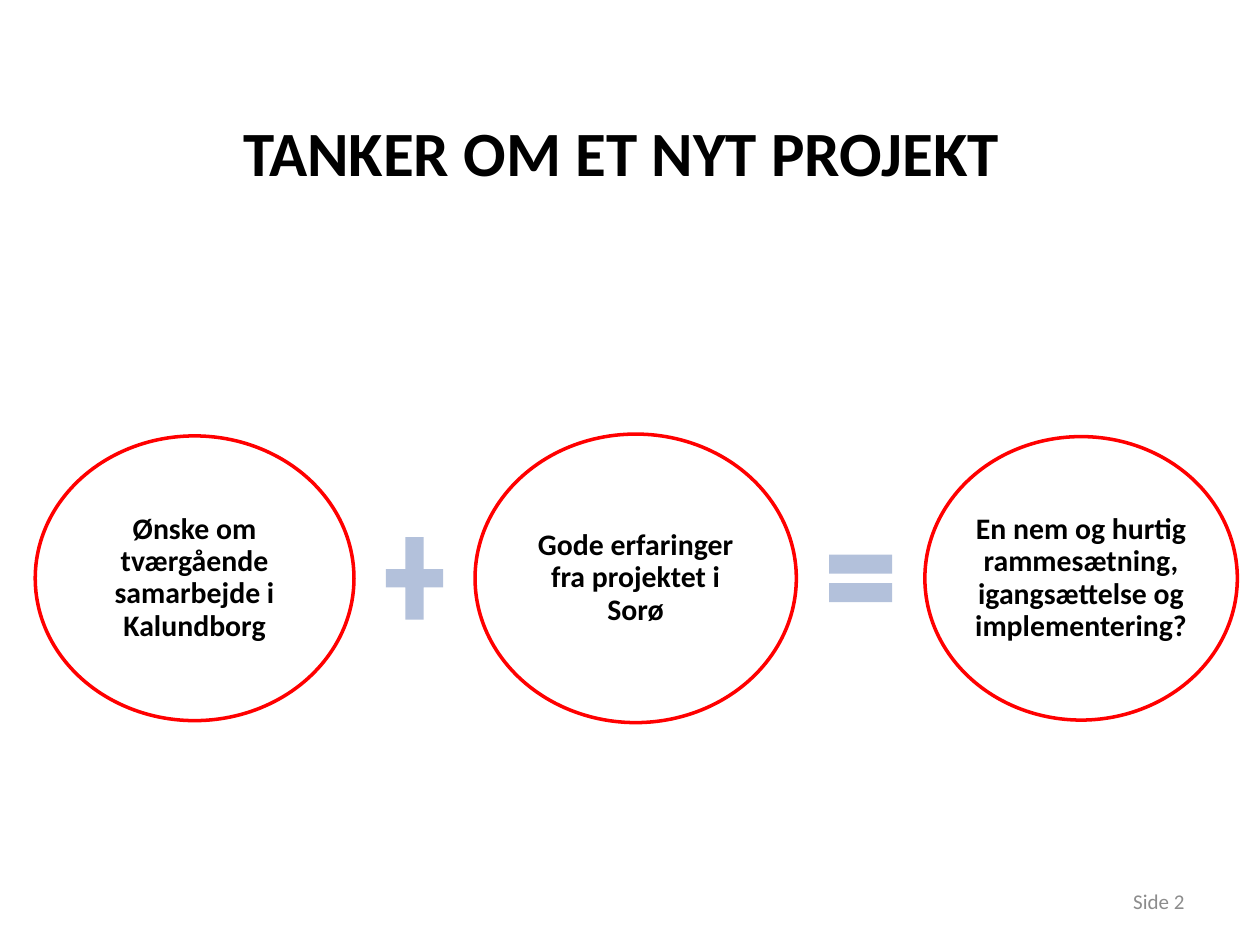
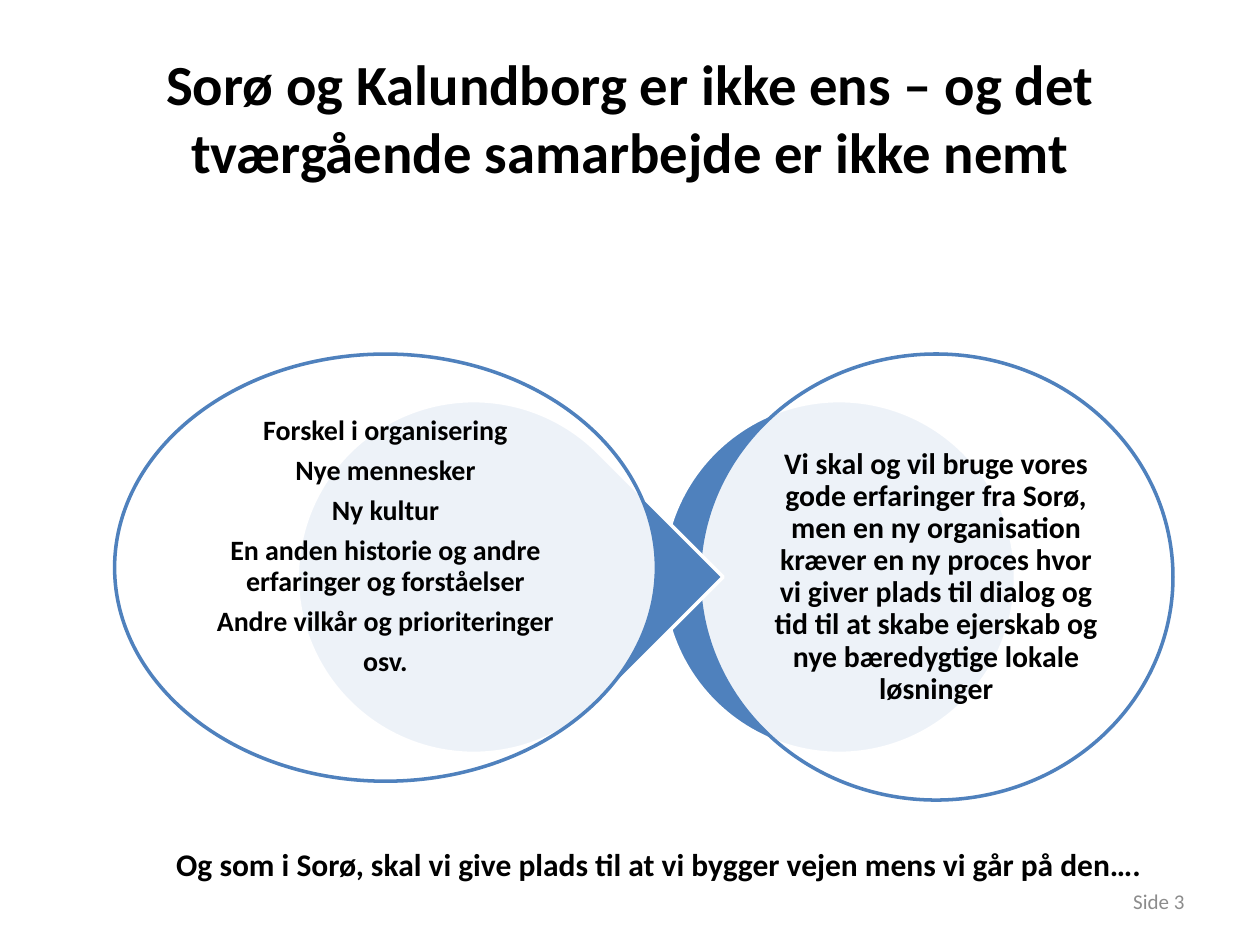
from lxml import etree
from pptx import Presentation
from pptx.dml.color import RGBColor
from pptx.enum.shapes import MSO_SHAPE
from pptx.enum.text import MSO_ANCHOR, MSO_AUTO_SIZE, PP_ALIGN
from pptx.oxml.ns import qn
from pptx.util import Inches, Pt

BLACK = RGBColor(0, 0, 0)
WHITE = RGBColor(0xFF, 0xFF, 0xFF)
RED = RGBColor(0xFF, 0, 0)
BLUE = RGBColor(0x4F, 0x81, 0xBD)
PALE = RGBColor(0xB3, 0xC1, 0xDB)
GREY = RGBColor(0x8C, 0x8C, 0x8C)

OVAL = MSO_SHAPE.OVAL
PLUS = MSO_SHAPE.MATH_PLUS
EQUAL = MSO_SHAPE.MATH_EQUAL
TEAR = MSO_SHAPE.TEAR
LEFT, CENTER, RIGHT = PP_ALIGN.LEFT, PP_ALIGN.CENTER, PP_ALIGN.RIGHT
TOP, MIDDLE = MSO_ANCHOR.TOP, MSO_ANCHOR.MIDDLE
FIXED = MSO_AUTO_SIZE.NONE

FONT = "Calibri"
TITLE_ONLY = 5
PAD = Inches(0.02)


class Deck:
    def __init__(self):
        self.prs = Presentation()
        self.prs.slide_width = Inches(10)
        self.prs.slide_height = Inches(7.5)
        self.slide = None

    def page(self, number, title, box, size, inset=0.05):
        layout = self.prs.slide_layouts[TITLE_ONLY]
        self.slide = self.prs.slides.add_slide(layout)
        head = self.slide.shapes.title
        head.left, head.top, head.width, head.height = map(Inches, box)
        head.text_frame.margin_top = Inches(inset)
        self.put(head.text_frame, [title], size)
        self.text(f"Side {number}", (7.17, 6.95, 2.33, 0.4), 12,
                  color=GREY, bold=False, align=RIGHT)

    def put(self, frame, lines, size, color=BLACK, bold=True,
            align=CENTER, anchor=MIDDLE):
        """Fill a text frame with one styled paragraph per line."""
        frame.word_wrap = True
        frame.auto_size = FIXED
        frame.vertical_anchor = anchor
        frame.text = "\n".join(lines)
        for para in frame.paragraphs:
            para.alignment = align
            font = para.font
            font.name, font.size, font.bold = FONT, Pt(size), bold
            font.color.rgb = color

    def text(self, line, box, size, **style):
        area = self.slide.shapes.add_textbox(*map(Inches, box))
        self.put(area.text_frame, [line], size, **style)

    def shape(self, kind, box, fill=None, line=None):
        item = self.slide.shapes.add_shape(kind, *map(Inches, box))
        item.shadow.inherit = False
        if fill is None:
            item.fill.background()
        else:
            item.fill.solid()
            item.fill.fore_color.rgb = fill
        if line is None:
            item.line.fill.background()
        else:
            item.line.color.rgb = line
            item.line.width = Pt(2)
        return item

    def bubble(self, lines, box, line, size=17, fill=None, anchor=MIDDLE):
        """Outlined oval with bold text inside; a fill is 90 % opaque."""
        item = self.shape(OVAL, box, fill, line)
        if fill is not None:
            tint = item.element.spPr.find(qn("a:solidFill"))[0]
            etree.SubElement(tint, qn("a:alpha"), val="90000")
        frame = item.text_frame
        self.put(frame, lines, size, anchor=anchor)
        frame.margin_left = frame.margin_right = PAD
        frame.margin_top = frame.margin_bottom = 0
        for para in frame.paragraphs:
            para.line_spacing = 0.9
        for para in frame.paragraphs[:-1]:
            para.space_after = Pt(0.35 * size)


def ideas(deck):
    deck.page(2, "TANKER OM ET NYT PROJEKT", (0.43, 0.3, 9, 1.56), 36, 0.29)
    middle = 4.59
    terms = [
        ("Ønske om tværgående samarbejde i Kalundborg", 0.28, 2.53, 2.26),
        ("Gode erfaringer fra projektet i Sorø", 3.77, 2.55, 2.29),
        ("En nem og hurtig rammesætning, igangsættelse og implementering?",
         7.34, 2.48, 2.25),
    ]
    for words, left, width, height in terms:
        deck.bubble([words], (left, middle - height / 2, width, height), RED)
    signs = [(PLUS, 2.98, 0.62, 0.89), (EQUAL, 6.49, 0.68, 0.64)]
    for kind, left, width, height in signs:
        deck.shape(kind, (left, middle - height / 2, width, height), PALE)


def contrast(deck):
    deck.page(3, "Sorø og Kalundborg er ikke ens – og det "
              "tværgående samarbejde er ikke nemt", (0.5, 0.3, 9, 1.25), 32.4)
    deck.shape(OVAL, (5.26, 3.18, 2.8, 2.8), BLUE, WHITE)
    deck.bubble(["Vi skal og vil bruge vores gode erfaringer fra Sorø, men "
                 "en ny organisation kræver en ny proces hvor vi giver plads "
                 "til dialog og tid til at skabe ejerskab og nye bæredygtige "
                 "lokale løsninger"],
                (5.55, 2.81, 3.76, 3.54), BLUE, fill=WHITE)
    drop = deck.shape(TEAR, (2.36, 3.18, 2.8, 2.8), BLUE, WHITE)
    drop.rotation = 45
    deck.bubble(["Forskel i organisering", "Nye mennesker", "Ny kultur",
                 "En anden historie og andre erfaringer og forståelser",
                 "Andre vilkår og prioriteringer", "osv."],
                (0.91, 2.81, 4.3, 3.39), BLUE, 16, WHITE, TOP)
    deck.text("Og som i Sorø, skal vi give plads til at vi bygger vejen "
              "mens vi går på den….", (1.3, 6.66, 8.11, 0.4), 18,
              align=LEFT, anchor=TOP)


def main():
    deck = Deck()
    ideas(deck)
    contrast(deck)
    deck.prs.save("out.pptx")


if __name__ == "__main__":
    main()
